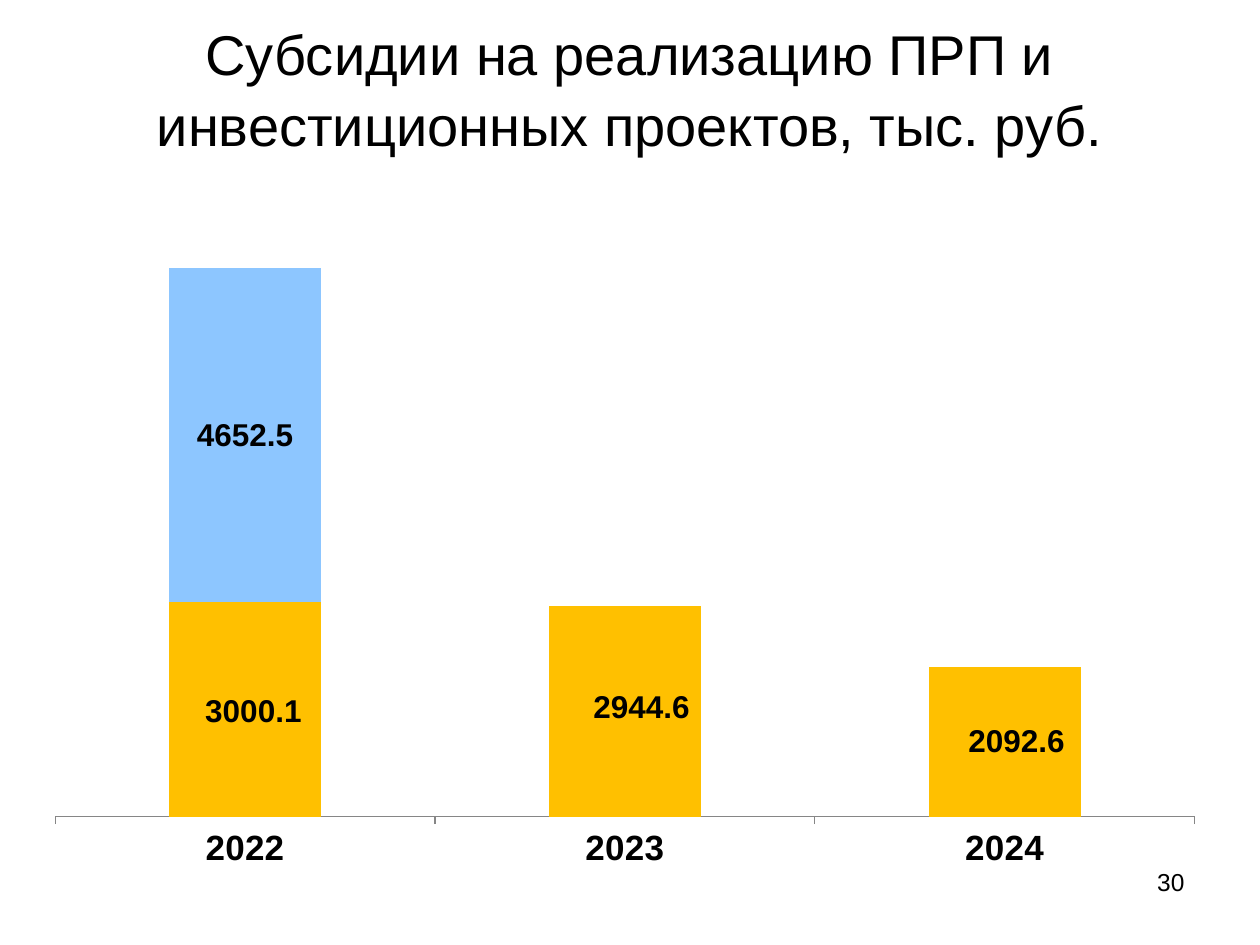
from lxml import etree
from pptx import Presentation
from pptx.chart.data import CategoryChartData
from pptx.dml.color import RGBColor
from pptx.enum.chart import XL_CHART_TYPE, XL_LABEL_POSITION, XL_TICK_LABEL_POSITION, XL_TICK_MARK
from pptx.enum.text import MSO_ANCHOR, MSO_AUTO_SIZE, PP_ALIGN
from pptx.oxml.ns import qn
from pptx.util import Inches, Pt

FONT = "Arial"
COLORS = {"text": "000000", "axis": "868686", "base": "FFC000", "extra": "8DC6FF"}
YEARS = ["2022", "2023", "2024"]
SUBSIDIES = [
    ("Series 1", [3000.1, 2944.6, 2092.6], "base"),
    ("Series 2", [4652.5, None, None], "extra"),
]
# Shift of each lower label from its bar's centre, as a share of the chart
LABEL_SHIFTS = [(0.007, 0.003), (0.014, -0.006), (0.01, 0)]


def rgb(name):
    return RGBColor.from_string(COLORS[name])


def format_font(font, size, bold=False):
    font.name = FONT
    font.size = Pt(size)
    font.bold = bold
    font.color.rgb = rgb("text")


def write_text(sp, text, size, align, anchor=MSO_ANCHOR.TOP, spacing=None):
    tf = sp.text_frame
    tf.word_wrap = True
    tf.auto_size = MSO_AUTO_SIZE.NONE
    tf.vertical_anchor = anchor
    p = tf.paragraphs[0]
    p.alignment = align
    p.line_spacing = spacing
    r = p.add_run()
    r.text = text
    format_font(r.font, size)


def make_layout(**values):
    """Return a c:layout element with a manual layout."""
    layout = etree.Element(qn("c:layout"))
    manual = etree.SubElement(layout, qn("c:manualLayout"))
    for tag, value in values.items():
        etree.SubElement(manual, qn(f"c:{tag}")).set("val", str(value))
    return layout


def format_axes(chart):
    axis = chart.category_axis
    axis.major_tick_mark = XL_TICK_MARK.OUTSIDE
    axis.tick_label_position = XL_TICK_LABEL_POSITION.LOW
    axis.format.line.color.rgb = rgb("axis")
    format_font(axis.tick_labels.font, 20, bold=True)
    values = chart.value_axis
    values.minimum_scale, values.maximum_scale = 0, 9000
    values.has_major_gridlines = False
    values.visible = False


def format_series(series, color):
    series.format.fill.solid()
    series.format.fill.fore_color.rgb = rgb(color)
    labels = series.data_labels
    labels.show_value = True
    labels.position = XL_LABEL_POSITION.CENTER
    format_font(labels.font, 18, bold=True)


def shift_labels(series):
    for i, (x, y) in enumerate(LABEL_SHIFTS):
        label = series.points[i].data_label
        label.position = XL_LABEL_POSITION.CENTER
        format_font(label.font, 18, bold=True)
    for idx, (x, y) in zip(series._element.xpath("c:dLbls/c:dLbl/c:idx"), LABEL_SHIFTS):
        idx.addnext(make_layout(x=x, y=y))


def add_subsidy_chart(s):
    data = CategoryChartData()
    data.categories = YEARS
    for name, values, _ in SUBSIDIES:
        data.add_series(name, values)
    chart = s.shapes.add_chart(
        XL_CHART_TYPE.COLUMN_STACKED,
        Inches(0.25), Inches(1.25), Inches(9.42), Inches(5.75), data,
    ).chart
    chart.has_legend = False
    chart.has_title = False
    format_font(chart.font, 18)
    format_axes(chart)

    plot = chart.plots[0]
    plot.gap_width, plot.overlap = 150, 100
    plot.vary_by_categories = False
    for series, (_, _, color) in zip(plot.series, SUBSIDIES):
        format_series(series, color)
    shift_labels(plot.series[0])

    area = chart._chartSpace.find(".//" + qn("c:plotArea"))
    for old in area.findall(qn("c:layout")):
        area.remove(old)
    area.insert(0, make_layout(layoutTarget="inner", xMode="edge", yMode="edge",
                               x=0.02, y=0.02, w=0.96, h=0.89))


def main():
    prs = Presentation()
    prs.slide_width, prs.slide_height = Inches(10), Inches(7.5)
    s = prs.slides.add_slide(prs.slide_layouts[5])
    title = s.shapes.title
    title.left, title.top = Inches(0.5), Inches(0.3)
    title.width, title.height = Inches(9), Inches(0.78)
    write_text(title, "Субсидии на реализацию ПРП и инвестиционных проектов, тыс. руб.",
               32, PP_ALIGN.CENTER, MSO_ANCHOR.MIDDLE, spacing=1.05)
    add_subsidy_chart(s)
    number = s.shapes.add_textbox(Inches(7.17), Inches(6.83), Inches(2.33), Inches(0.52))
    write_text(number, "30", 14, PP_ALIGN.RIGHT)
    prs.save("out.pptx")


if __name__ == "__main__":
    main()
